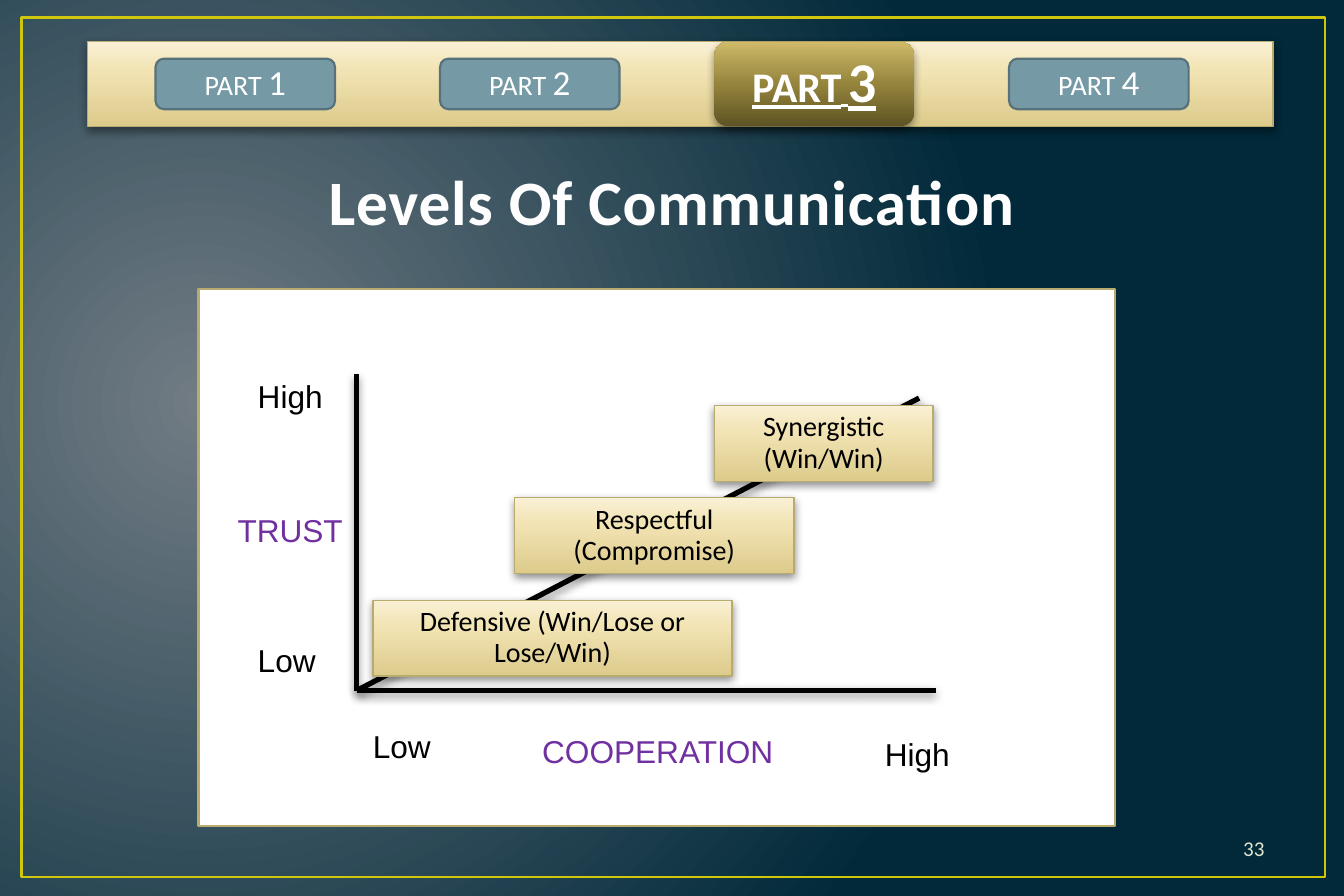
"""Build the Levels Of Communication slide; places are percent of the slide's width and height."""
from pptx import Presentation, util as u
from pptx.dml.color import RGBColor
from pptx.enum import shapes, text
from pptx.oxml import parse_xml
from pptx.oxml.ns import nsdecls, qn

WIDTH, HEIGHT = 10.63, 7.09
WHITE, BLACK, PURPLE, GOLD = "FFFFFF", "000000", "7030A0", "B9AB6F"
BACKDROP = [(0, "717C84"), (100, "01293A")]
CREAM = [(0, "DDCB8B"), (65, "F1E3B3"), (100, "F9F1D5")]
BRONZE = [(0, "5E5324"), (50, "95843C"), (70, "AB994E"), (100, "CFBB69")]
UPWARD = '<a:lin ang="16200000" scaled="0"/>'
RADIAL = '<a:path path="circle"><a:fillToRect l="15000" t="50000" r="85000" b="60000"/></a:path>'

FRAME = (1.6, 1.97, 96.99, 95.91)
NAV_BAR = (6.49, 4.65, 88.24, 9.45)
PANEL = (14.77, 32.3, 68.2, 59.94)
TITLE = ("Levels Of Communication", (4.99, 18.19, 90.03, 16.64))
PAGE = ("33", (71.68, 91.96, 23.33, 5.36))
PARTS, CURRENT = ["1", "2", "3", "4"], "3"
FIRST_CENTRE, PART_STEP = 18.25, 21.17
PART_WIDTH, CURRENT_WIDTH, PART_HEIGHT = 13.36, 14.86, 5.64

ORIGIN = (26.53, 77.08)
AXIS_ENDS = [(26.53, 41.75), (69.61, 77.08)]
TREND_END = (68.39, 44.43)
LABEL_HEIGHT, LEVEL_HEIGHT = 5.36, 8.46
LABELS = [
    ("High", 18.25, 41.75, 9.41, BLACK),
    ("TRUST", 16.75, 56.7, 12.51, PURPLE),
    ("Low", 18.25, 71.23, 6.5, BLACK),
    ("Low", 26.81, 80.82, 6.5, BLACK),
    ("COOPERATION", 39.42, 81.38, 21.17, PURPLE),
    ("High", 64.91, 81.66, 7.06, BLACK),
]
LEVELS = [
    ("Defensive (Win/Lose or Lose/Win)", 27.75, 67, 26.72),
    ("Synergistic (Win/Win)", 53.15, 45.28, 16.27),
    ("Respectful (Compromise)", 38.29, 55.57, 20.79),
]

deck = Presentation()
deck.slide_width, deck.slide_height = u.Inches(WIDTH), u.Inches(HEIGHT)
slide = deck.slides.add_slide(deck.slide_layouts[6])


def color(value):
    """Turn a hex string into a colour."""
    return RGBColor.from_string(value)


def place(*shares):
    """Turn alternating horizontal and vertical percentages into lengths."""
    return [u.Inches(share / 100 * (HEIGHT if i % 2 else WIDTH)) for i, share in enumerate(shares)]


def blend(owner, fill, stops, direction):
    """Fill with gradient stops along a direction."""
    fill.gradient()
    gradient = next(owner.element.iter(qn("a:gradFill")))
    for child in list(gradient):
        gradient.remove(child)
    marks = "".join(f'<a:gs pos="{pos * 1000}"><a:srgbClr val="{value}"/></a:gs>' for pos, value in stops)
    holder = parse_xml(f'<a:gradFill {nsdecls("a")}><a:gsLst>{marks}</a:gsLst>{direction}</a:gradFill>')
    gradient.extend(list(holder))


def cast_shadow(item):
    """Give a shape or line a soft shadow below it."""
    properties = item.element.spPr
    for effects in properties.findall(qn("a:effectLst")):
        properties.remove(effects)
    properties.append(parse_xml(
        f'<a:effectLst {nsdecls("a")}><a:outerShdw blurRad="63500" dist="25400" dir="5400000" '
        'rotWithShape="0"><a:srgbClr val="000000"><a:alpha val="43000"/></a:srgbClr>'
        '</a:outerShdw></a:effectLst>'))


def draw_box(area, fill=None, edge=None, weight=1, rounded=False, shadow=False):
    """Add a rectangle with a flat, blended or empty fill."""
    kind = shapes.MSO_SHAPE.ROUNDED_RECTANGLE if rounded else shapes.MSO_SHAPE.RECTANGLE
    box = slide.shapes.add_shape(kind, *place(*area))
    box.shadow.inherit = False
    if fill is None:
        box.fill.background()
    elif isinstance(fill, str):
        box.fill.solid()
        box.fill.fore_color.rgb = color(fill)
    else:
        blend(box, box.fill, fill, UPWARD)
    if edge:
        box.line.color.rgb = color(edge)
        box.line.width = u.Pt(weight)
    else:
        box.line.fill.background()
    if shadow:
        cast_shadow(box)
    return box


def draw_line(start, end):
    """Add a heavy black line with a shadow."""
    line = slide.shapes.add_connector(shapes.MSO_CONNECTOR.STRAIGHT, *place(*start, *end))
    line.line.color.rgb = color(BLACK)
    line.line.width = u.Pt(3)
    cast_shadow(line)


def write(words, area=None, box=None, size=16, font="Calibri", tint=BLACK, align="CENTER",
          anchor="TOP", bold=False, underline=False, spacing=0.93, tracking=None):
    """Write words, or (words, size) runs, in a box or in a new text box."""
    box = box or slide.shapes.add_textbox(*place(*area))
    frame = box.text_frame
    frame.word_wrap = True
    frame.vertical_anchor = getattr(text.MSO_ANCHOR, anchor)
    paragraph = frame.paragraphs[0]
    paragraph.alignment = getattr(text.PP_ALIGN, align)
    paragraph.line_spacing = spacing
    for piece, points in [(words, size)] if isinstance(words, str) else words:
        run = paragraph.add_run()
        run.text = piece
        run.font.size, run.font.name = u.Pt(points), font
        run.font.bold, run.font.underline = bold, underline
        run.font.color.rgb = color(tint)
        if tracking:
            run.font._element.set("spc", str(tracking))


blend(slide, slide.background.fill, BACKDROP, RADIAL)
draw_box(FRAME, edge="CFC60D", weight=1.5)
draw_box(NAV_BAR, CREAM, GOLD, 0.75, shadow=True)

bar_top, bar_height = NAV_BAR[1], NAV_BAR[3]
for index, part in enumerate(PARTS):
    centre = FIRST_CENTRE + index * PART_STEP
    current = part == CURRENT
    width, height = (CURRENT_WIDTH, bar_height) if current else (PART_WIDTH, PART_HEIGHT)
    area = (centre - width / 2, bar_top + (bar_height - height) / 2, width, height)
    if current:
        button = draw_box(area, BRONZE, rounded=True, shadow=True)
        runs = [("PART", 24), (" ", 16), (part, 32)]
    else:
        button = draw_box(area, "759AA5", "57727A", 1.25, rounded=True)
        runs = [("PART ", 16), (part, 20)]
    write(runs, box=button, tint=WHITE, anchor="MIDDLE", bold=current, underline=current)

write(*TITLE, size=36, tint="FEFEFE", bold=True, tracking=50)
write(*PAGE, size=12, tint="DFE6D0", align="RIGHT", anchor="MIDDLE", spacing=1.0)

draw_box(PANEL, WHITE, GOLD, 1.25)
for end in AXIS_ENDS + [TREND_END]:
    draw_line(ORIGIN, end)
for label, left, top, width, tint in LABELS:
    write(label, (left, top, width, LABEL_HEIGHT), size=18, font="Arial", tint=tint, align="LEFT")
for level, left, top, width in LEVELS:
    write(level, box=draw_box((left, top, width, LEVEL_HEIGHT), CREAM, GOLD, 0.75, shadow=True))

deck.save("out.pptx")
